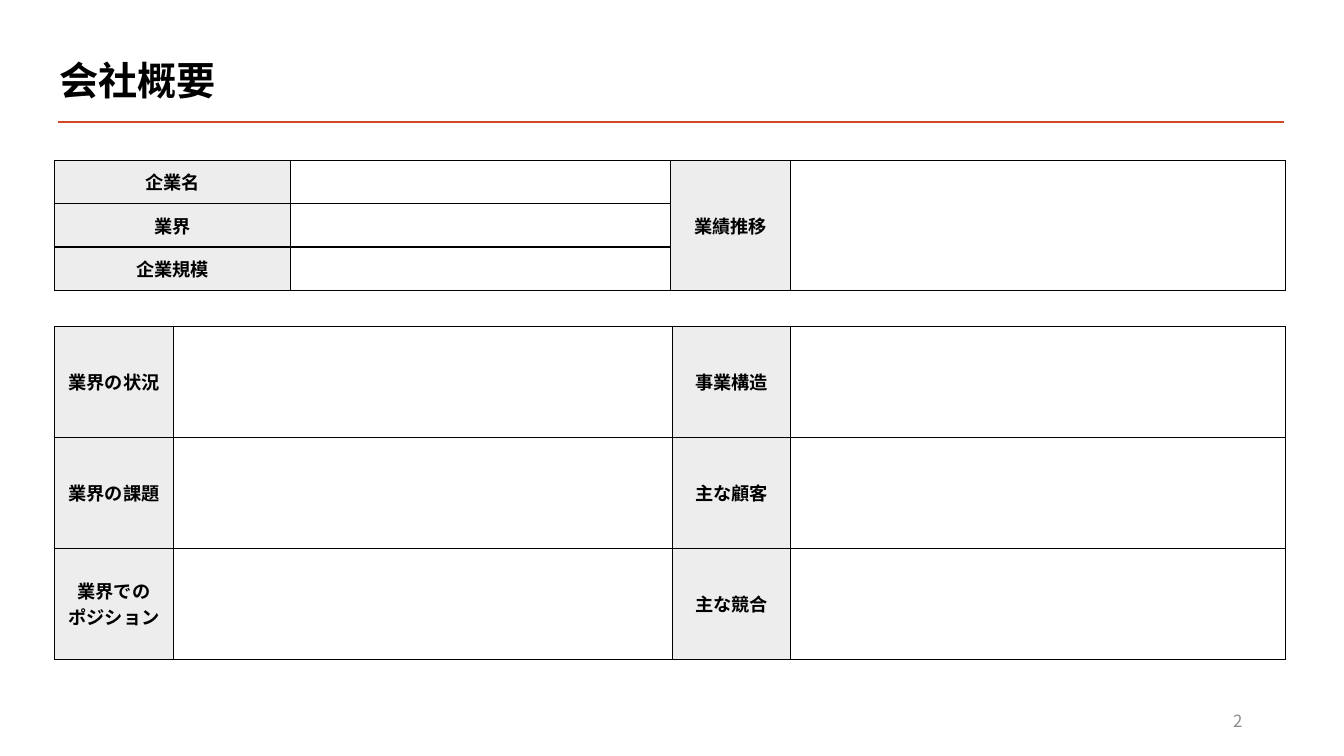
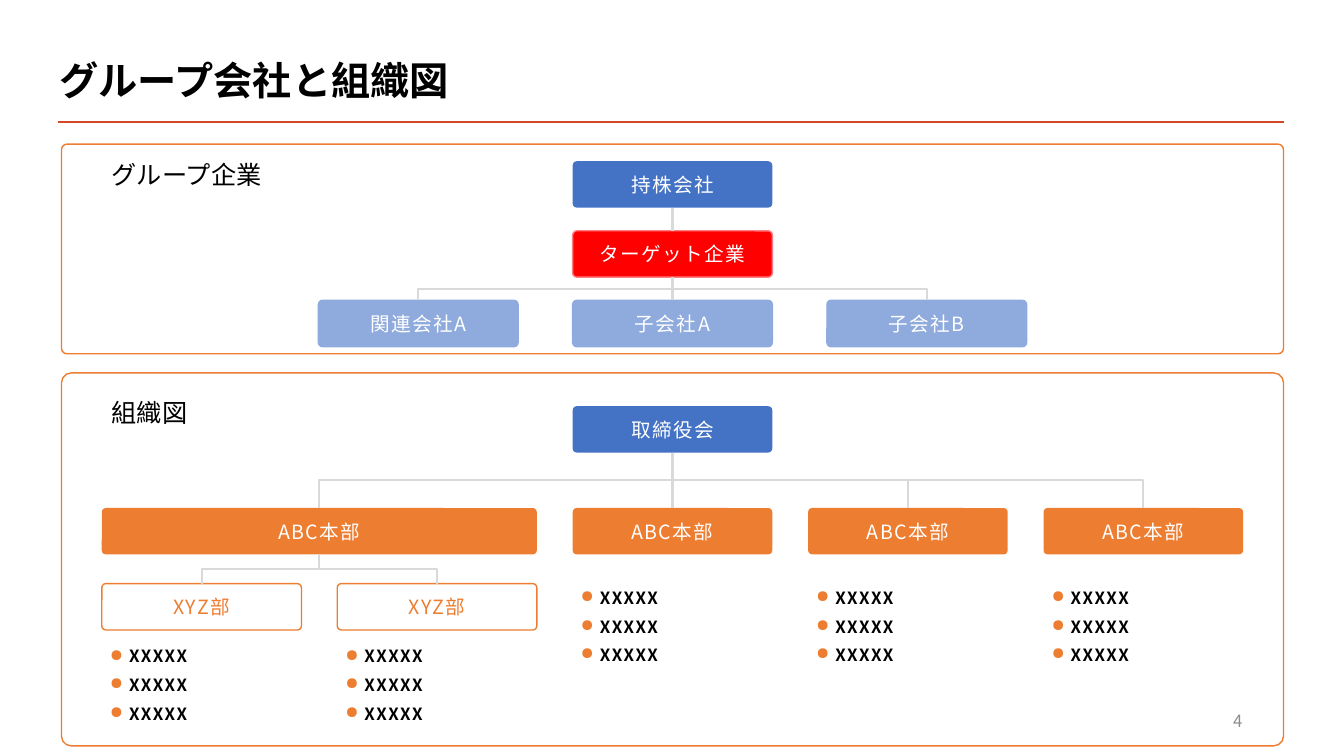
"""Builds a company overview slide and a group structure slide."""
from lxml import etree
from pptx import Presentation
from pptx.dml.color import RGBColor
from pptx.enum.shapes import MSO_CONNECTOR, MSO_SHAPE
from pptx.enum.text import MSO_ANCHOR, MSO_AUTO_SIZE, PP_ALIGN
from pptx.oxml.ns import qn
from pptx.util import Inches, Pt

ELBOW, STRAIGHT = MSO_CONNECTOR.ELBOW, MSO_CONNECTOR.STRAIGHT
ROUNDED = MSO_SHAPE.ROUNDED_RECTANGLE
MIDDLE, TOP = MSO_ANCHOR.MIDDLE, MSO_ANCHOR.TOP
LEFT, CENTER, RIGHT = PP_ALIGN.LEFT, PP_ALIGN.CENTER, PP_ALIGN.RIGHT
NO_AUTOFIT = MSO_AUTO_SIZE.NONE
TITLE_ONLY = 5

BLACK = RGBColor(0x00, 0x00, 0x00)
WHITE = RGBColor(0xFF, 0xFF, 0xFF)
RULE_RED = RGBColor(0xD2, 0x47, 0x26)
LABEL_GRAY = RGBColor(0xED, 0xED, 0xED)
NUMBER_GRAY = RGBColor(0x8C, 0x8C, 0x8C)
LINK_GRAY = RGBColor(0xD9, 0xD9, 0xD9)
ORANGE = RGBColor(0xED, 0x7D, 0x31)
BLUE = RGBColor(0x44, 0x72, 0xC4)
PALE_BLUE = RGBColor(0x8F, 0xAA, 0xDC)
RED = RGBColor(0xFF, 0x00, 0x00)
PINK = RGBColor(0xFF, 0x7C, 0x80)

JAPANESE_FONT = "Noto Sans CJK JP"
LATIN_FONT = "Arial"

TABLES = [
    {"at": (6.67, 3.24), "columns": (1.17, 4.91), "row": 1.1, "merged": (),
     "cells": [["事業構造", ""], ["主な顧客", ""], ["主な競合", ""]]},
    {"at": (0.54, 1.59), "columns": (2.34, 3.77, 1.19, 4.91), "row": 0.43, "merged": (2, 3),
     "cells": [["企業名", "", "業績推移", ""], ["業界", "", "", ""], ["企業規模", "", "", ""]]},
    {"at": (0.54, 3.24), "columns": (1.18, 4.95), "row": 1.1, "merged": (),
     "cells": [["業界の状況", ""], ["業界の課題", ""], ["業界での\nポジション", ""]]},
]
LABEL_COLUMNS = (0, 2)

PANELS = [("グループ企業", 1.43, 2.08, 1.53), ("組織図", 3.7, 3.7, 3.89)]

STYLES = {
    "head": (BLUE, None, WHITE),
    "target": (RED, PINK, WHITE),
    "affiliate": (PALE_BLUE, PALE_BLUE, WHITE),
    "division": (ORANGE, None, WHITE),
    "department": (WHITE, ORANGE, ORANGE),
}

FIRST_COLUMN, LAST_COLUMN = 1.01, 10.35
PITCH = (LAST_COLUMN - FIRST_COLUMN) / 4
BOX_WIDTH, BOX_HEIGHT = 1.98, 0.46

# name, label, column, columns spanned, top, style, parent
BOXES = [
    ("holding", "持株会社", 2, 1, 1.6, "head", None),
    ("target", "ターゲット企業", 2, 1, 2.29, "target", "holding"),
    ("related", "関連会社A", 0.92, 1, 2.98, "affiliate", "target"),
    ("subsidiary a", "子会社A", 2, 1, 2.98, "affiliate", "target"),
    ("subsidiary b", "子会社B", 3.08, 1, 2.98, "affiliate", "target"),
    ("board", "取締役会", 2, 1, 4.03, "head", None),
    ("division 1", "ABC本部", 0, 2, 5.04, "division", "board"),
    ("division 2", "ABC本部", 2, 1, 5.04, "division", "board"),
    ("division 3", "ABC本部", 3, 1, 5.04, "division", "board"),
    ("division 4", "ABC本部", 4, 1, 5.04, "division", "board"),
    ("department 1", "XYZ部", 0, 1, 5.79, "department", "division 1"),
    ("department 2", "XYZ部", 1, 1, 5.79, "department", "division 1"),
]
DUTIES = ["XXXXX"] * 3
DUTY_TOPS = [6.41, 6.41, 5.83, 5.83, 5.83]


def column_left(column):
    return FIRST_COLUMN + column * PITCH


def add_run(paragraph, text, size, color, bold=False, latin=JAPANESE_FONT, spacing=0):
    run = paragraph.add_run()
    run.text = text
    run.font.size, run.font.bold, run.font.name = Pt(size), bold, latin
    run.font.color.rgb = color
    properties = run.font._element
    etree.SubElement(properties, qn("a:ea"), typeface=JAPANESE_FONT)
    if spacing:
        properties.set("spc", str(spacing * 100))


def add_text(slide, box, text, size, color, align=LEFT, anchor=TOP):
    shape = slide.shapes.add_textbox(*map(Inches, box))
    frame = shape.text_frame
    frame.word_wrap, frame.vertical_anchor = True, anchor
    frame.paragraphs[0].alignment = align
    add_run(frame.paragraphs[0], text, size, color)


def add_line(slide, kind, start, end, color, width):
    line = slide.shapes.add_connector(kind, *map(Inches, start + end))
    line.line.color.rgb, line.line.width = color, Pt(width)
    etree.SubElement(line._element.spPr, qn("a:effectLst"))
    return line


def add_rounded(slide, box, corner, fill, outline):
    shape = slide.shapes.add_shape(ROUNDED, *map(Inches, box))
    shape.shadow.inherit = False
    shape.adjustments[0] = corner
    shape.fill.solid()
    shape.fill.fore_color.rgb = fill
    if outline is None:
        shape.line.fill.background()
    else:
        shape.line.color.rgb, shape.line.width = outline, Pt(1)
    return shape


def start_slide(presentation, title_text, number):
    slide = presentation.slides.add_slide(presentation.slide_layouts[TITLE_ONLY])
    add_line(slide, STRAIGHT, (0.58, 1.21), (12.74, 1.21), RULE_RED, 2)
    title = slide.shapes.title
    title.left, title.top, title.width, title.height = map(Inches, (0.49, 0.47, 10, 0.7))
    frame = title.text_frame
    frame.auto_size, frame.vertical_anchor = NO_AUTOFIT, MIDDLE
    paragraph = frame.paragraphs[0]
    paragraph.alignment, paragraph.line_spacing = LEFT, 0.9
    add_run(paragraph, title_text, 28, BLACK, bold=True)
    return slide, lambda: add_text(
        slide, (9.42, 6.95, 3, 0.4), str(number), 12, NUMBER_GRAY, RIGHT, MIDDLE)


def format_cell(cell, text, fill):
    properties = cell._tc.get_or_add_tcPr()
    for side in ("lnL", "lnR", "lnT", "lnB"):
        border = etree.SubElement(properties, qn(f"a:{side}"), w=str(Pt(1)))
        paint = etree.SubElement(border, qn("a:solidFill"))
        etree.SubElement(paint, qn("a:srgbClr"), val=str(BLACK))
    cell.fill.solid()
    cell.fill.fore_color.rgb = fill
    cell.vertical_anchor = MIDDLE
    cell.margin_left = cell.margin_right = Inches(0.08)
    cell.margin_top = cell.margin_bottom = Inches(0.05)
    paragraph = cell.text_frame.paragraphs[0]
    paragraph.alignment = CENTER
    for index, line in enumerate(text.split("\n") if text else []):
        if index:
            paragraph.add_line_break()
        add_run(paragraph, line, 13, BLACK, bold=True, latin=LATIN_FONT)


def add_form(slide, form):
    rows, widths = form["cells"], form["columns"]
    size = (sum(widths), form["row"] * len(rows))
    table = slide.shapes.add_table(
        len(rows), len(widths), *map(Inches, form["at"] + size)).table
    table.first_row = table.horz_banding = False
    for column, width in zip(table.columns, widths):
        column.width = Inches(width)
    for row_index, row in enumerate(rows):
        table.rows[row_index].height = Inches(form["row"])
        for column_index, text in enumerate(row):
            fill = LABEL_GRAY if column_index in LABEL_COLUMNS else WHITE
            format_cell(table.cell(row_index, column_index), text, fill)
    for column_index in form["merged"]:
        table.cell(0, column_index).merge(table.cell(len(rows) - 1, column_index))


def add_box(slide, label, column, span, top, style):
    fill, outline, color = STYLES[style]
    width = BOX_WIDTH + (span - 1) * PITCH
    shape = add_rounded(
        slide, (column_left(column), top, width, BOX_HEIGHT), 0.088, fill, outline)
    frame = shape.text_frame
    frame.vertical_anchor = MIDDLE
    frame.paragraphs[0].alignment = CENTER
    add_run(frame.paragraphs[0], label, 14, color, spacing=1)
    return shape


def link(slide, parent, child):
    start_x, end_x = (shape.left + shape.width // 2 for shape in (parent, child))
    start_y, end_y = parent.top + parent.height, child.top
    shift, drop = end_x - start_x, end_y - start_y
    bent = abs(shift) > Inches(0.02)
    line = add_line(slide, ELBOW if bent else STRAIGHT, (0, 0), (1, 1), LINK_GRAY, 1.5)
    line.begin_connect(parent, 2)
    line.end_connect(child, 0)
    if bent:
        line.left = (start_x + end_x - drop) // 2
        line.top = (start_y + end_y - abs(shift)) // 2
        line.width, line.height = drop, abs(shift)
        transform = line._element.spPr.find(qn("a:xfrm"))
        transform.set("rot", str((270 if shift > 0 else 90) * 60000))
        transform.set("flipH", "1" if shift > 0 else "0")
        transform.set("flipV", "0")


def add_duties(slide, column, top):
    box = (column_left(column) + 0.08, top, 0.87, 0.89)
    frame = slide.shapes.add_textbox(*map(Inches, box)).text_frame
    frame.word_wrap = False
    frame.margin_left = frame.margin_right = frame.margin_top = frame.margin_bottom = 0
    for index, duty in enumerate(DUTIES):
        paragraph = frame.add_paragraph() if index else frame.paragraphs[0]
        paragraph.line_spacing, paragraph.space_after = 1.0, Pt(6)
        properties = paragraph._p.get_or_add_pPr()
        properties.set("marL", str(Inches(0.19)))
        properties.set("indent", str(-Inches(0.19)))
        bullet_color = etree.SubElement(properties, qn("a:buClr"))
        etree.SubElement(bullet_color, qn("a:srgbClr"), val=str(ORANGE))
        etree.SubElement(properties, qn("a:buChar"), char="●")
        add_run(paragraph, duty, 12, BLACK, bold=True, spacing=1)


def build_overview(presentation):
    slide, add_number = start_slide(presentation, "会社概要", 2)
    for form in TABLES:
        add_form(slide, form)
    add_number()


def build_structure(presentation):
    slide, add_number = start_slide(presentation, "グループ会社と組織図", 4)
    for heading, top, height, heading_top in PANELS:
        add_rounded(slide, (0.61, top, 12.12, height), 0.026, WHITE, ORANGE)
        add_text(slide, (FIRST_COLUMN, heading_top, 1.78, 0.4), heading, 18, BLACK)
    shapes = {}
    for name, label, column, span, top, style, parent in BOXES:
        shapes[name] = add_box(slide, label, column, span, top, style)
        if parent:
            link(slide, shapes[parent], shapes[name])
    for column, top in enumerate(DUTY_TOPS):
        add_duties(slide, column, top)
    add_number()


def main():
    presentation = Presentation()
    presentation.slide_width, presentation.slide_height = Inches(13.33), Inches(7.5)
    build_overview(presentation)
    build_structure(presentation)
    presentation.save("out.pptx")


if __name__ == "__main__":
    main()
